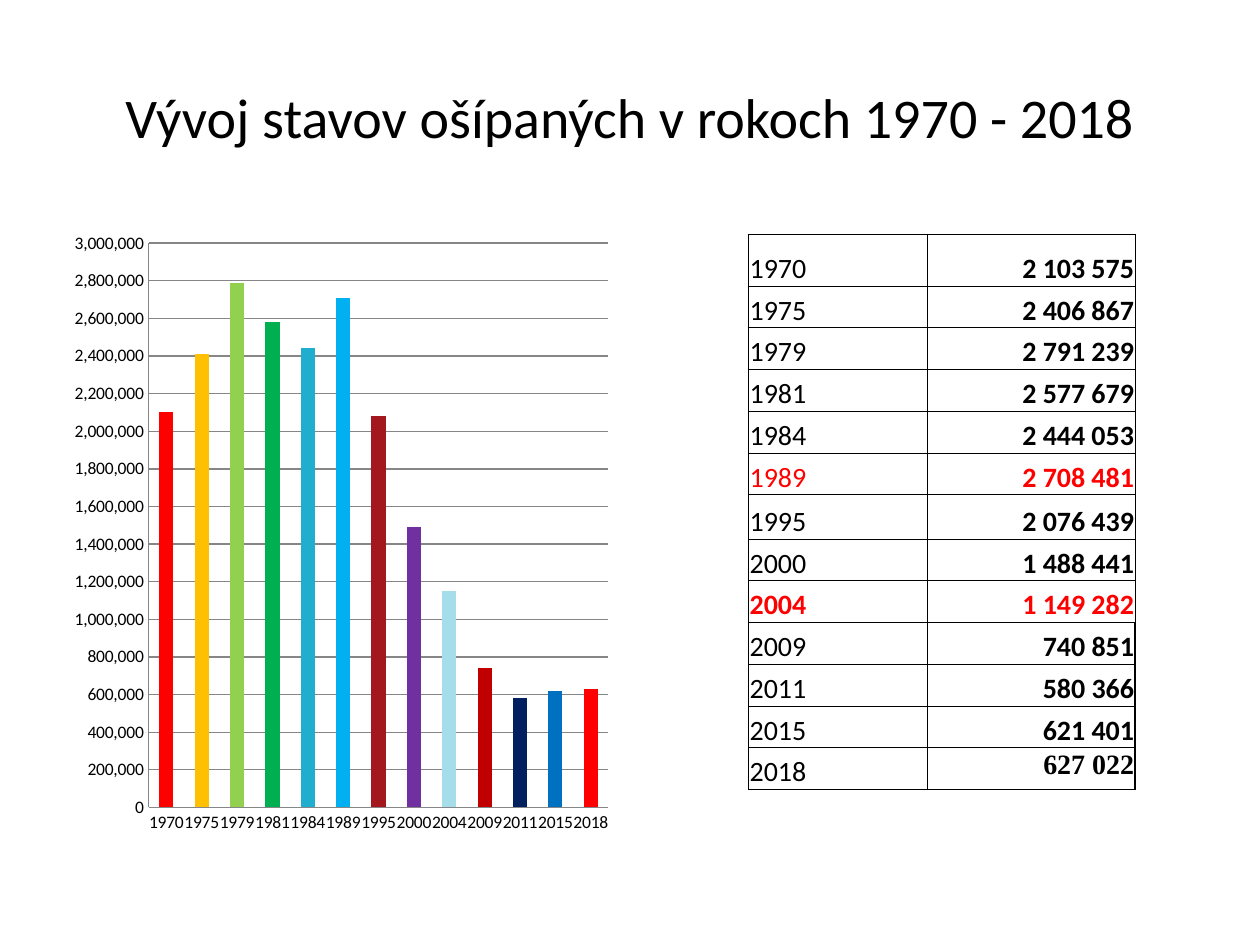
from pptx import Presentation
from pptx.chart.data import CategoryChartData as ChartData
from pptx.dml.color import RGBColor as RGB
from pptx.enum.chart import XL_CHART_TYPE as Kind, XL_TICK_MARK as Tick
from pptx.enum.text import MSO_ANCHOR as Anchor, PP_ALIGN as Align
from pptx.oxml import parse_xml
from pptx.oxml.ns import nsdecls, qn
from pptx.util import Inches, Pt

COLORS = {"text": "000000", "mark": "FF0000", "grid": "868686", "bar": "2DA2BF"}

# Year, head count, bar colour
HERD = [
    ("1970", 2103575, "FF0000"),
    ("1975", 2406867, "FFC000"),
    ("1979", 2791239, "92D050"),
    ("1981", 2577679, "00B050"),
    ("1984", 2444053, "1FAECD"),
    ("1989", 2708481, "00B0F0"),
    ("1995", 2076439, "A3171E"),
    ("2000", 1488441, "7030A0"),
    ("2004", 1149282, "A6DDEA"),
    ("2009", 740851, "C00000"),
    ("2011", 580366, "002060"),
    ("2015", 621401, "0070C0"),
    ("2018", 627022, "FF0000"),
]
MARKED = ("1989", "2004")


class Deck:
    def __init__(self, font):
        self.font = font
        self.prs = Presentation()
        self.prs.slide_width, self.prs.slide_height = Inches(10), Inches(7.5)
        self.slide = self.prs.slides.add_slide(self.prs.slide_layouts[6])

    def style(self, font, size, color="text", bold=False, name=None):
        font.name, font.size, font.bold = name or self.font, Pt(size), bold
        font.color.rgb = RGB.from_string(COLORS[color])

    def title(self, text, *box):
        frame = self.slide.shapes.add_textbox(*map(Inches, box)).text_frame
        frame.word_wrap = True
        frame.vertical_anchor = Anchor.MIDDLE
        para = frame.paragraphs[0]
        para.text, para.alignment = text, Align.CENTER
        self.style(para.font, 32)

    def line(self, part):
        part.format.line.width = Pt(0.75)
        part.format.line.color.rgb = RGB.from_string(COLORS["grid"])

    def chart(self, rows, left, top, wide, high):
        data = ChartData(number_format="#,##0")
        data.categories = [year for year, _, _ in rows]
        data.add_series("Series 1", [round(count, -4) for _, count, _ in rows])
        box = map(Inches, (left, top, wide, high))
        chart = self.slide.shapes.add_chart(
            Kind.COLUMN_CLUSTERED, *box, data).chart
        chart.has_legend = chart.has_title = False
        self.style(chart.font, 10)

        # Bars
        plot = chart.plots[0]
        plot.gap_width, plot.vary_by_categories = 150, False
        bars = plot.series[0]
        bars.format.fill.solid()
        bars.format.fill.fore_color.rgb = RGB.from_string(COLORS["bar"])
        for i, (_, _, color) in enumerate(rows):
            fill = bars.points[i].format.fill
            fill.solid()
            fill.fore_color.rgb = RGB.from_string(color)

        # Axes
        years, scale = chart.category_axis, chart.value_axis
        for axis in (years, scale):
            axis.major_tick_mark = axis.minor_tick_mark = Tick.NONE
            self.style(axis.tick_labels.font, 10)
            self.line(axis)
        scale.minimum_scale, scale.maximum_scale = 0, 3000000
        scale.major_unit = 200000
        scale.tick_labels.number_format = "#,##0"
        scale.tick_labels.number_format_is_linked = False
        scale.has_major_gridlines = True
        self.line(scale.major_gridlines)

        # Plot area inside the axes, as shares of the chart
        area = chart.element.find(".//" + qn("c:plotArea"))
        for old in area.findall(qn("c:layout")):
            area.remove(old)
        shares = {"x": 0.68 / wide, "y": 0.18 / high,
                  "w": 3.65 / wide, "h": 4.48 / high}
        spots = "".join(f'<c:{k} val="{v}"/>' for k, v in shares.items())
        area.insert(0, parse_xml(
            f'<c:layout {nsdecls("c")}><c:manualLayout>'
            '<c:layoutTarget val="inner"/><c:xMode val="edge"/>'
            f'<c:yMode val="edge"/>{spots}</c:manualLayout></c:layout>'))

    def cell(self, cell, text, align, thick, anchor=Anchor.BOTTOM, **look):
        cell.margin_left = cell.margin_right = cell.margin_top = Inches(0.01)
        cell.margin_bottom = 0
        cell.vertical_anchor = anchor
        para = cell.text_frame.paragraphs[0]
        para.text, para.alignment = text, align
        self.style(para.font, 16, **look)
        cell.fill.background()
        props = cell._tc.get_or_add_tcPr()
        for i, side in enumerate("LRTB"):
            width = Pt(1 if side == thick else 0.5)
            props.insert(i, parse_xml(
                f'<a:ln{side} {nsdecls("a")} w="{width}"><a:solidFill>'
                f'<a:srgbClr val="{COLORS["text"]}"/></a:solidFill></a:ln{side}>'))

    def table(self, rows, widths, heights, left, top):
        box = map(Inches, (left, top, sum(widths), sum(heights)))
        table = self.slide.shapes.add_table(len(rows), len(widths), *box).table
        table.first_row = table.horz_banding = False
        for col, width in zip(table.columns, widths):
            col.width = Inches(width)
        for i, (year, count, _) in enumerate(rows):
            table.rows[i].height = Inches(heights[i])
            color = "mark" if year in MARKED else "text"
            last = i == len(rows) - 1
            self.cell(table.cell(i, 0), year, Align.LEFT, "L" if i < 4 else None,
                      color=color, bold=year == "2004")
            self.cell(table.cell(i, 1), f"{count:,}".replace(",", " "),
                      Align.RIGHT, "R" if i > 8 else None,
                      Anchor.TOP if last else Anchor.BOTTOM, color=color,
                      bold=True, name="Times New Roman" if last else None)


def main():
    deck = Deck("Calibri")
    deck.title("Vývoj stavov ošípaných v rokoch 1970 - 2018", 0.5, 0.3, 9, 1.25)
    deck.chart(HERD, 0.5, 1.75, 4.42, 4.95)
    # The plain rows share what the two taller ones leave
    first, tall = 0.41, 0.35
    row = (4.41 - first - tall) / (len(HERD) - 2)
    heights = [first] + [row] * 5 + [tall] + [row] * 6
    deck.table(HERD, [1.42, 1.65], heights, 5.94, 1.86)
    deck.prs.save("out.pptx")


if __name__ == "__main__":
    main()
